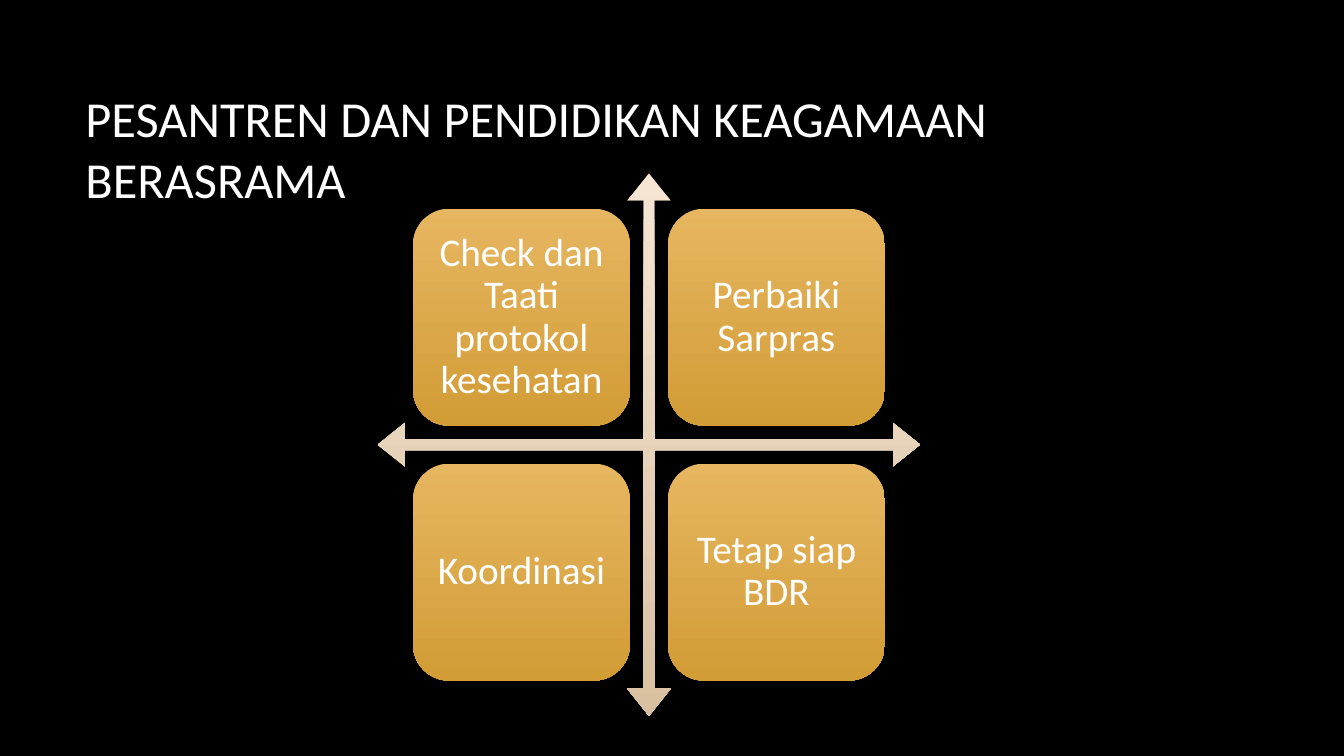
from pptx import Presentation
from pptx import util as u
from pptx.dml.color import RGBColor
from pptx.enum import shapes, text

FONT = "Calibri"
COLOURS = {
    "background": "000000",
    "text": "FFFFFF",
    "arrow_top": "F5E5D2",
    "arrow_bottom": "D9C0A1",
    "tile_top": "E6B660",
    "tile_bottom": "D29C36",
}
TITLE = "PESANTREN DAN PENDIDIKAN KEAGAMAAN BERASRAMA"
STEPS = [
    ["Check dan Taati protokol kesehatan", "Perbaiki Sarpras"],
    ["Koordinasi", "Tetap siap BDR"],
]


def colour(name):
    return RGBColor.from_string(COLOURS[name])


def write(para, words, size):
    span = para.add_run()
    span.text = words
    span.font.name = FONT
    span.font.size = u.Pt(size)
    span.font.color.rgb = colour("text")


def shade(shape, top, bottom):
    """Fill from top to bottom, without outline or shadow."""
    shape.fill.gradient()
    shape.fill.gradient_angle = 270
    for stop, name in zip(shape.fill.gradient_stops, (top, bottom)):
        stop.color.rgb = colour(name)
    shape.line.fill.background()
    shape.shadow.inherit = False


def add_title(page, left, top, width, height):
    box = page.shapes.title
    box.left, box.top, box.width, box.height = left, top, width, height
    frame = box.text_frame
    frame.word_wrap = True
    frame.auto_size = text.MSO_AUTO_SIZE.NONE
    frame.vertical_anchor = text.MSO_ANCHOR.MIDDLE
    para = frame.paragraphs[0]
    para.alignment = text.PP_ALIGN.LEFT
    write(para, TITLE, 36)


def add_tile(page, left, top, side, words):
    tile = page.shapes.add_shape(
        shapes.MSO_SHAPE.ROUNDED_RECTANGLE, left, top, side, side)
    shade(tile, "tile_top", "tile_bottom")
    frame = tile.text_frame
    frame.word_wrap = True
    frame.vertical_anchor = text.MSO_ANCHOR.MIDDLE
    frame.margin_left = frame.margin_right = u.Cm(0.28)
    frame.margin_top = frame.margin_bottom = u.Cm(0.28)
    para = frame.paragraphs[0]
    para.alignment = text.PP_ALIGN.CENTER
    para.line_spacing = 0.9
    write(para, words, 28)


def add_matrix(page, left, top, side):
    # Crossed arrows behind the tiles
    arrows = page.shapes.add_shape(
        shapes.MSO_SHAPE.QUAD_ARROW, left, top, side, side)
    for index, share in enumerate((0.02, 0.04, 0.05)):
        arrows.adjustments[index] = share
    shade(arrows, "arrow_top", "arrow_bottom")

    # One tile in each quadrant
    tile_side = int(side * 0.4)
    margin, pitch = int(side * 0.065), int(side * 0.47)
    for row, steps in enumerate(STEPS):
        for column, words in enumerate(steps):
            add_tile(page, left + margin + column * pitch,
                     top + margin + row * pitch, tile_side, words)


def main():
    deck = Presentation()
    deck.slide_width, deck.slide_height = u.Cm(33.87), u.Cm(19.05)
    page = deck.slides.add_slide(deck.slide_layouts[5])
    page.background.fill.solid()
    page.background.fill.fore_color.rgb = colour("background")
    add_title(page, u.Cm(1.9), u.Cm(1.7), u.Cm(28.15), u.Cm(4.04))
    add_matrix(page, u.Cm(9.52), u.Cm(4.37), u.Cm(13.67))
    deck.save("out.pptx")


if __name__ == "__main__":
    main()
